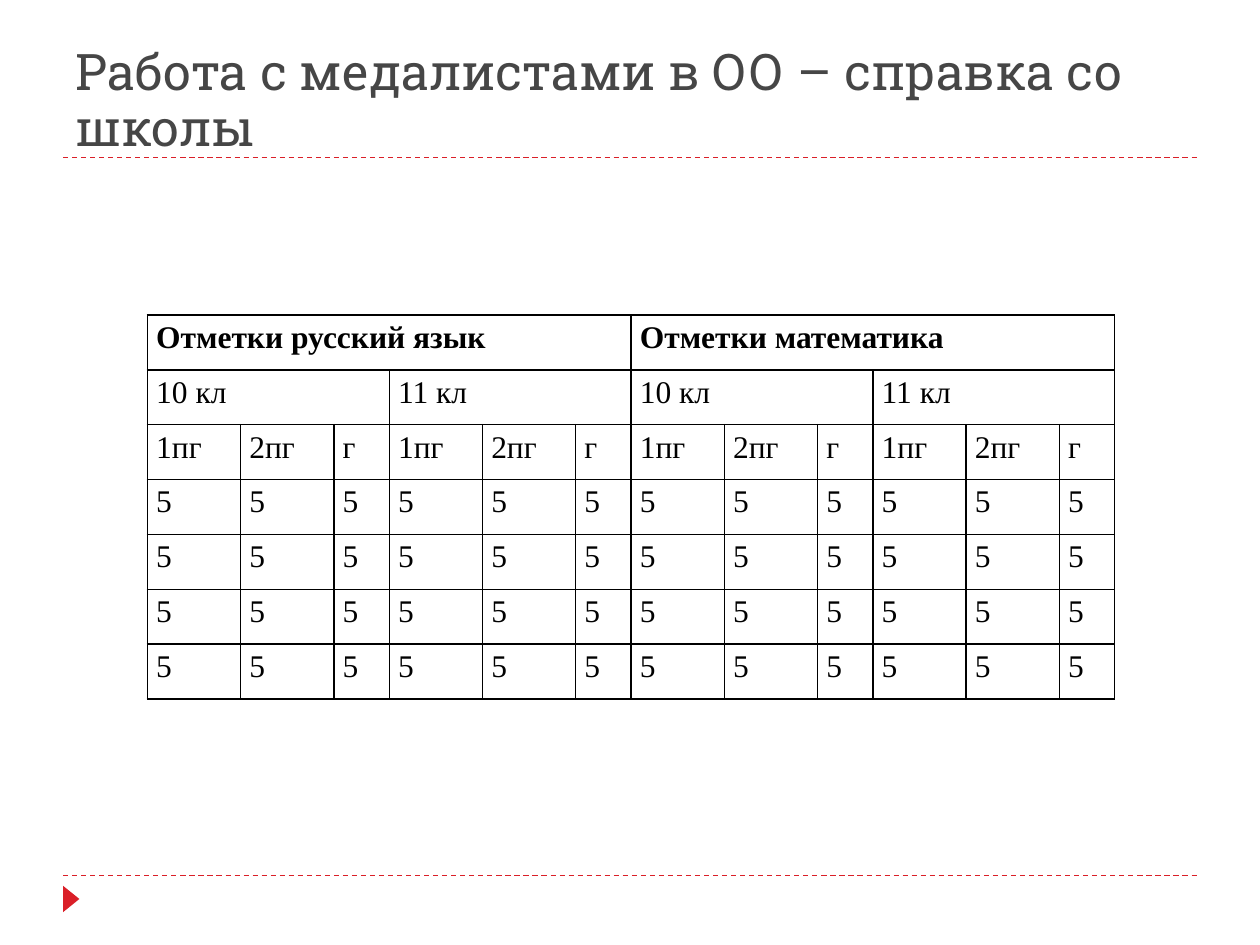
import pptx
import pptx.util
import pptx.dml.color
import pptx.enum.dml
import pptx.enum.shapes
import pptx.enum.text
import pptx.oxml
from lxml import etree

Inches, Pt = pptx.util.Inches, pptx.util.Pt
RGBColor = pptx.dml.color.RGBColor
RED = RGBColor(0xDA, 0x1F, 0x28)
GREY = RGBColor(0x46, 0x46, 0x46)
BLACK = RGBColor(0, 0, 0)
A = "http://schemas.openxmlformats.org/drawingml/2006/main"

TITLE = "Работа с медалистами в ОО – справка со школы"
RULE_HEIGHTS = [6.95, 1.25]
# Labels in a row share the columns equally
ROWS = [
    ["Отметки русский язык", "Отметки математика"],
    ["10 кл", "11 кл"] * 2,
    ["1пг", "2пг", "г"] * 4,
] + [["5"] * 12] * 4
COLUMN_WIDTHS = [0.74, 0.74, 0.44] * 4
ROW_HEIGHT = 3.05 / len(ROWS)


def write(frame, text, line_spacing, formats, color):
    frame.word_wrap = True
    para = frame.paragraphs[0]
    para.line_spacing = line_spacing
    span = para.add_run()
    span.text = text
    for name, value in formats.items():
        setattr(span.font, name, value)
    span.font.color.rgb = color


def add_rule(page, y):
    rule = page.shapes.add_connector(
        pptx.enum.shapes.MSO_CONNECTOR.STRAIGHT,
        Inches(0.5), Inches(y), Inches(9.5), Inches(y))
    rule.line.color.rgb = RED
    rule.line.width = Pt(0.75)
    rule.line.dash_style = pptx.enum.dml.MSO_LINE.DASH
    etree.SubElement(rule._element.spPr, f"{{{A}}}effectLst")


def add_marker(page):
    marker = page.shapes.add_shape(
        pptx.enum.shapes.MSO_SHAPE.ISOSCELES_TRIANGLE,
        Inches(0.46), Inches(7.07), Inches(0.21), Inches(0.13))
    marker.rotation = 90
    marker.shadow.inherit = False
    marker.fill.solid()
    marker.fill.fore_color.rgb = RED
    marker.line.fill.background()


def add_title(page):
    box = page.shapes.add_textbox(
        Inches(0.5), Inches(0.17), Inches(9), Inches(1.08))
    box.text_frame.vertical_anchor = pptx.enum.text.MSO_ANCHOR.BOTTOM
    box.text_frame.margin_bottom = 0
    write(box.text_frame, TITLE, 0.92,
          {"name": "Roboto Slab", "size": Pt(28.8)}, GREY)


def style_cell(cell):
    """Clear the fill, set the margins and draw a black border all round."""
    margins = {"margin_left": 0.07, "margin_right": 0.07,
               "margin_top": 0, "margin_bottom": 0}
    for name, value in margins.items():
        setattr(cell, name, Inches(value))
    properties = cell._tc.get_or_add_tcPr()
    for side in ("lnL", "lnR", "lnT", "lnB"):
        properties.append(pptx.oxml.parse_xml(
            f'<a:{side} xmlns:a="{A}" w="{Pt(1)}"><a:solidFill>'
            f'<a:srgbClr val="{BLACK}"/></a:solidFill></a:{side}>'))
    cell.fill.background()


def add_marks_table(page):
    table = page.shapes.add_table(
        len(ROWS), len(COLUMN_WIDTHS), Inches(1.17), Inches(2.5),
        Inches(sum(COLUMN_WIDTHS)), Inches(ROW_HEIGHT * len(ROWS))).table
    table.first_row = table.horz_banding = False
    for column, width in zip(table.columns, COLUMN_WIDTHS):
        column.width = Inches(width)
    for row in table.rows:
        row.height = Inches(ROW_HEIGHT)
    for cell in table.iter_cells():
        style_cell(cell)
    for r, labels in enumerate(ROWS):
        reach = len(COLUMN_WIDTHS) // len(labels)
        for i, label in enumerate(labels):
            cell = table.cell(r, i * reach)
            if reach > 1:
                cell.merge(table.cell(r, (i + 1) * reach - 1))
            write(cell.text_frame, label, 1.15,
                  {"name": "Times New Roman", "size": Pt(18), "bold": r == 0},
                  BLACK)


def main():
    deck = pptx.Presentation()
    deck.slide_width, deck.slide_height = Inches(10), Inches(7.5)
    page = deck.slides.add_slide(deck.slide_layouts[6])
    for y in RULE_HEIGHTS:
        add_rule(page, y)
    add_marker(page)
    add_title(page)
    add_marks_table(page)
    deck.save("out.pptx")


if __name__ == "__main__":
    main()
